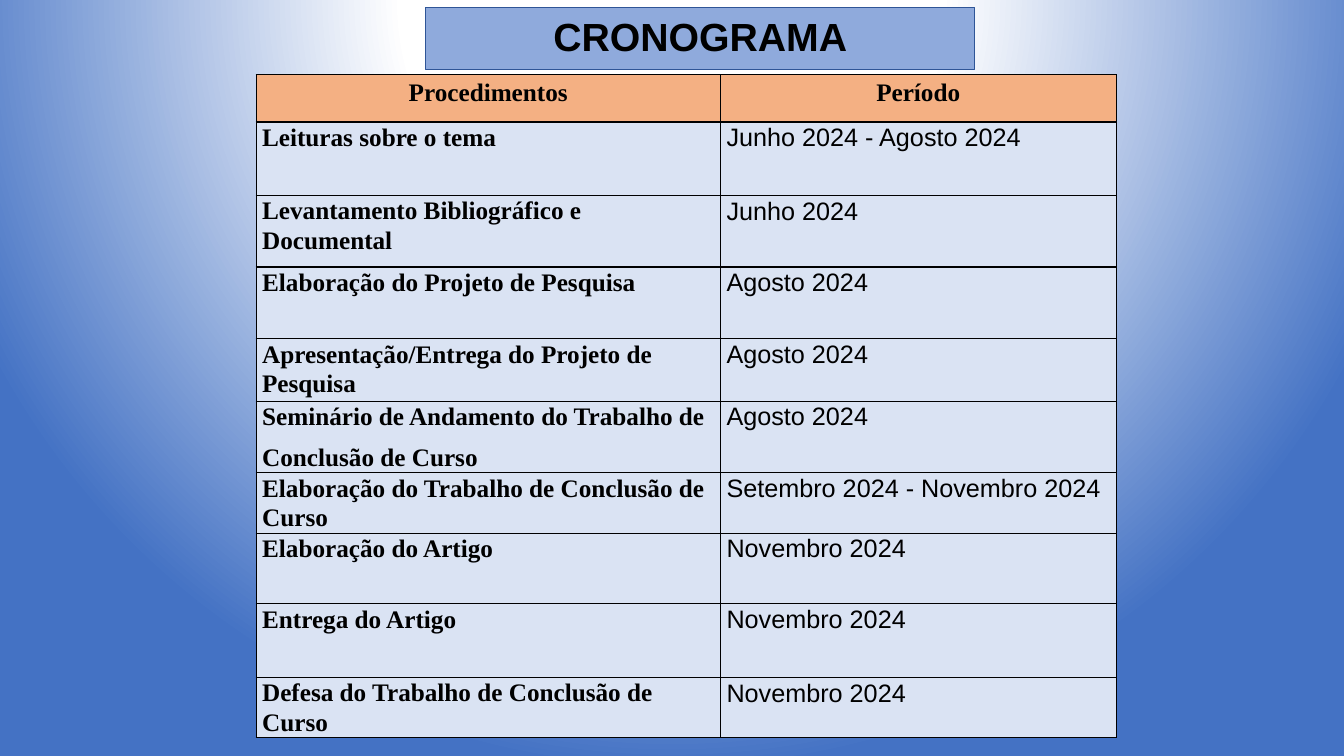
from dataclasses import dataclass

from lxml import etree
from pptx import Presentation
from pptx.dml.color import RGBColor
from pptx.enum.shapes import MSO_SHAPE
from pptx.enum.text import MSO_ANCHOR, PP_ALIGN
from pptx.oxml.ns import qn
from pptx.util import Inches, Pt

RECTANGLE = MSO_SHAPE.RECTANGLE
MIDDLE = MSO_ANCHOR.MIDDLE
LEFT, CENTER, JUSTIFY = PP_ALIGN.LEFT, PP_ALIGN.CENTER, PP_ALIGN.JUSTIFY


@dataclass(frozen=True)
class Theme:
    white: str = "FFFFFF"
    backdrop: str = "4472C4"
    banner: str = "8FAADC"
    banner_line: str = "2F5597"
    header: str = "F4B083"
    body: str = "DAE3F3"
    ink: str = "000000"
    sans: str = "Arial"
    serif: str = "Times New Roman"
    title_size: int = 28
    text_size: int = 18


THEME = Theme()
SLIDE_WIDTH, SLIDE_HEIGHT = 13.33, 7.5

# Boxes are left, top, width, height in inches
TITLE_BOX = (4.22, 0.07, 5.45, 0.62)
ROW_HEIGHTS = (0.47, 0.73, 0.71, 0.71, 0.62, 0.71, 0.6, 0.7, 0.73, 0.6)
TABLE_BOX = (2.54, 0.74, 8.53, sum(ROW_HEIGHTS))
COLUMN_SHARES = (0.54, 0.46)

HEADERS = ("Procedimentos", "Período")
SCHEDULE = (
    ("Leituras sobre o tema", "Junho 2024 - Agosto 2024"),
    ("Levantamento Bibliográfico e Documental", "Junho 2024"),
    ("Elaboração do Projeto de Pesquisa", "Agosto 2024"),
    ("Apresentação/Entrega do Projeto de Pesquisa", "Agosto 2024"),
    ("Seminário de Andamento do Trabalho de\nConclusão de Curso", "Agosto 2024"),
    ("Elaboração do Trabalho de Conclusão de Curso", "Setembro 2024 - Novembro 2024"),
    ("Elaboração do Artigo", "Novembro 2024"),
    ("Entrega do Artigo", "Novembro 2024"),
    ("Defesa do Trabalho de Conclusão de Curso", "Novembro 2024"),
)


def color(code):
    return RGBColor.from_string(code)


def format_text(frame, font, size, bold, align, line_spacing, before=0, after=0):
    for para in frame.paragraphs:
        para.alignment = align
        para.line_spacing = line_spacing
        para.space_before, para.space_after = Pt(before), Pt(after)
        for span in para.runs:
            span.font.name = font
            span.font.size = Pt(size)
            span.font.bold = bold
            span.font.color.rgb = color(THEME.ink)


def paint_background(page):
    """Circular gradient centred above the slide."""
    page.background.fill.gradient()
    gradient = page.element.find(".//" + qn("a:gradFill"))
    for child in list(gradient):
        gradient.remove(child)
    stops = etree.SubElement(gradient, qn("a:gsLst"))
    for percent, code in ((0, THEME.white), (35, THEME.white), (100, THEME.backdrop)):
        stop = etree.SubElement(stops, qn("a:gs"), pos=str(percent * 1000))
        etree.SubElement(stop, qn("a:srgbClr"), val=code)
    circle = etree.SubElement(gradient, qn("a:path"), attrib={"path": "circle"})
    etree.SubElement(circle, qn("a:fillToRect"), l="50000", t="-80000", r="50000", b="180000")


def add_title(page, box):
    banner = page.shapes.add_shape(RECTANGLE, *map(Inches, box))
    banner.shadow.inherit = False
    banner.fill.solid()
    banner.fill.fore_color.rgb = color(THEME.banner)
    banner.line.color.rgb = color(THEME.banner_line)
    banner.line.width = Pt(0.75)
    frame = banner.text_frame
    frame.text = "CRONOGRAMA"
    frame.vertical_anchor = MIDDLE
    format_text(frame, THEME.sans, THEME.title_size, True, CENTER, 0.9)


def add_borders(cell):
    properties = cell._tc.get_or_add_tcPr()
    for index, side in enumerate(("a:lnL", "a:lnR", "a:lnT", "a:lnB")):
        border = etree.Element(qn(side), w=str(Pt(1)))
        fill = etree.SubElement(border, qn("a:solidFill"))
        etree.SubElement(fill, qn("a:srgbClr"), val=THEME.ink)
        properties.insert(index, border)


def fill_cell(cell, text, fill):
    cell.margin_left = cell.margin_right = Inches(0.06)
    cell.margin_top = cell.margin_bottom = 0
    cell.fill.solid()
    cell.fill.fore_color.rgb = color(fill)
    add_borders(cell)
    cell.text_frame.text = text


def add_schedule(page, box):
    left, top, width, height = map(Inches, box)
    rows = (HEADERS, *SCHEDULE)
    table = page.shapes.add_table(len(rows), len(HEADERS), left, top, width, height).table
    table.first_row = table.horz_banding = False
    for column, share in zip(table.columns, COLUMN_SHARES):
        column.width = int(width * share)
    for row, row_height in zip(table.rows, ROW_HEIGHTS):
        row.height = Inches(row_height)

    # Header row, then procedures in bold serif and periods in sans
    size = THEME.text_size
    for row_index, texts in enumerate(rows):
        is_header = row_index == 0
        for column_index, text in enumerate(texts):
            cell = table.cell(row_index, column_index)
            fill_cell(cell, text, THEME.header if is_header else THEME.body)
            frame = cell.text_frame
            if is_header:
                format_text(frame, THEME.serif, size, True, CENTER, 1.15, 12, 8)
            elif column_index == 0:
                format_text(frame, THEME.serif, size, True, LEFT, 1.07, after=8)
            else:
                format_text(frame, THEME.sans, size, False, JUSTIFY, 1.07, after=8)


def main():
    deck = Presentation()
    deck.slide_width, deck.slide_height = Inches(SLIDE_WIDTH), Inches(SLIDE_HEIGHT)
    page = deck.slides.add_slide(deck.slide_layouts[6])
    paint_background(page)
    add_title(page, TITLE_BOX)
    add_schedule(page, TABLE_BOX)
    deck.save("out.pptx")


if __name__ == "__main__":
    main()
